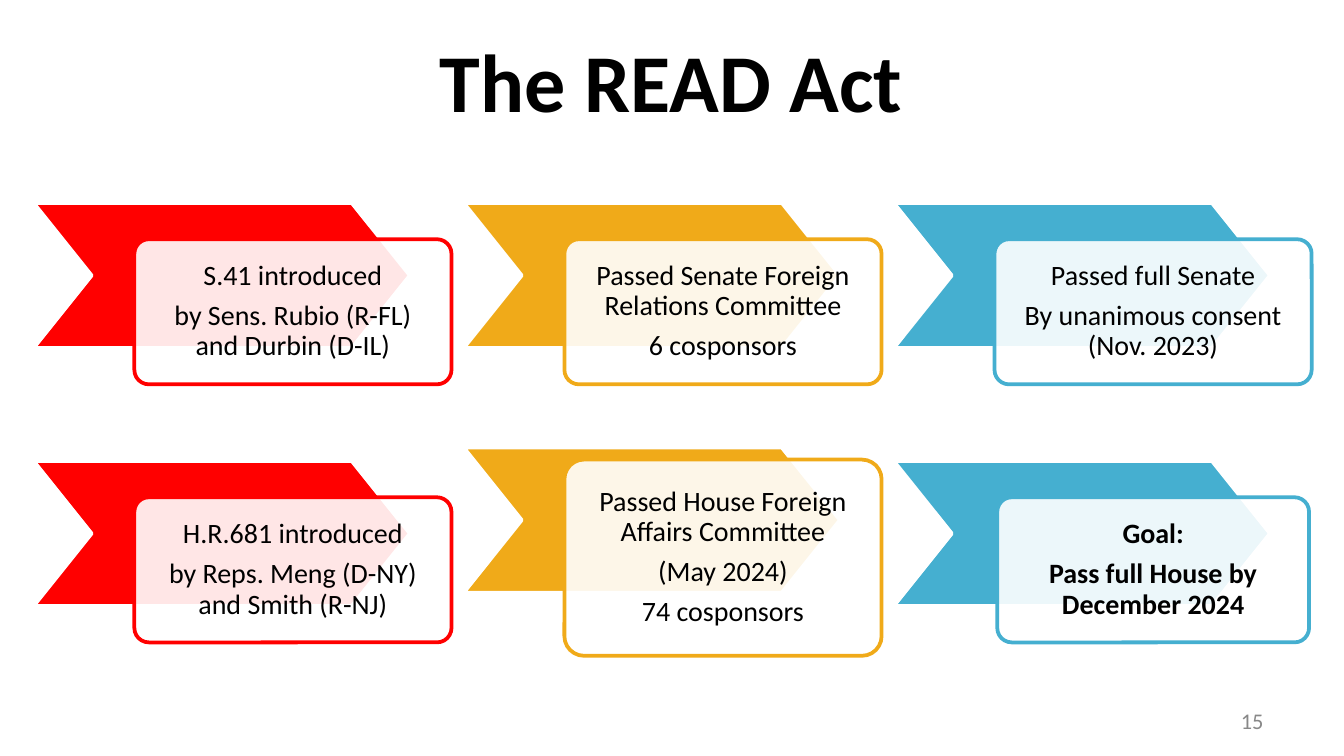
"""Build the READ Act progress slide."""
from lxml import etree
from pptx import Presentation
from pptx.dml.color import RGBColor
from pptx.enum.shapes import MSO_SHAPE
from pptx.enum.text import MSO_ANCHOR, MSO_AUTO_SIZE, PP_ALIGN
from pptx.oxml.ns import qn
from pptx.util import Inches, Pt

CHEVRON, ROUNDED = MSO_SHAPE.CHEVRON, MSO_SHAPE.ROUNDED_RECTANGLE
MIDDLE, NO_FIT = MSO_ANCHOR.MIDDLE, MSO_AUTO_SIZE.NONE
CENTER, RIGHT = PP_ALIGN.CENTER, PP_ALIGN.RIGHT

THEME = {
    "font": "Calibri", "text": "000000", "muted": "888888", "white": "FFFFFF",
    "steps": ["FF0000", "F0AA19", "45AFD0"],
    "title_size": 44, "step_size": 15, "number_size": 12,
}
TITLE = "The READ Act"
PAGE_NUMBER = "15"
CARD = {"dx": 0.75, "dy": 0.27, "width": 2.36, "height": 1.08}
ROWS = [
    {"top": 1.51, "steps": [
        {"lines": ["S.41 introduced", "by Sens. Rubio (R-FL) and Durbin (D-IL)"]},
        {"lines": ["Passed Senate Foreign Relations Committee", "6 cosponsors"]},
        {"lines": ["Passed full Senate", "By unanimous consent (Nov. 2023)"]},
    ]},
    {"top": 3.43, "steps": [
        {"lines": ["H.R.681 introduced", "by Reps. Meng (D-NY) and Smith (R-NJ)"]},
        {"lines": ["Passed House Foreign Affairs Committee", "(May 2024)", "74 cosponsors"],
         "rise": 0.1, "card": {"dy": 0.09, "height": 1.46}},
        {"lines": ["Goal:", "Pass full House by December 2024"],
         "bold": True, "card": {"dx": 0.77, "width": 2.32}},
    ]},
]
SLIDE_WIDTH = Inches(10)
SLIDE_HEIGHT = SLIDE_WIDTH * 9 // 16
LEFT, COLUMN_STEP = 0.25, 3.2
CHEVRON_WIDTH, CHEVRON_HEIGHT = 2.8, 1.08


def color(value):
    return RGBColor.from_string(value)


def write(box, lines, size, ink, align, bold=False, inset=None):
    frame = box.text_frame
    frame.word_wrap = True
    frame.auto_size = NO_FIT
    frame.vertical_anchor = MIDDLE
    if inset is not None:
        frame.margin_left = frame.margin_right = Inches(inset)
        frame.margin_top = frame.margin_bottom = Inches(inset)
    frame.text = "\n".join(lines)
    for para in frame.paragraphs:
        para.alignment = align
        para.font.name = THEME["font"]
        para.font.size = Pt(size)
        para.font.bold = bold
        para.font.color.rgb = color(ink)
    return frame.paragraphs


def add_panel(group, kind, bounds, adjustment, fill, line):
    panel = group.shapes.add_shape(kind, *map(Inches, bounds))
    panel.shadow.inherit = False
    panel.adjustments[0] = adjustment
    panel.fill.solid()
    panel.fill.fore_color.rgb = color(fill)
    panel.line.color.rgb = color(line)
    panel.line.width = Pt(2)
    return panel


def set_opacity(panel, percent):
    fill = panel.fill._xPr.find(qn("a:solidFill"))
    etree.SubElement(fill[0], qn("a:alpha"), val=str(percent * 1000))


def add_step(group, step, left, row_top, accent):
    top = row_top - step.get("rise", 0)
    place = {**CARD, **step.get("card", {})}
    add_panel(group, CHEVRON, (left, top, CHEVRON_WIDTH, CHEVRON_HEIGHT),
              0.4, accent, THEME["white"])
    bounds = (left + place["dx"], top + place["dy"], place["width"], place["height"])
    card = add_panel(group, ROUNDED, bounds, 0.1, THEME["white"], accent)
    set_opacity(card, 90)
    paragraphs = write(card, step["lines"], THEME["step_size"], THEME["text"],
                       CENTER, step.get("bold", False), 0.12)
    for para in paragraphs:
        para.line_spacing = 0.9
        para.space_before = Pt(0)
        para.space_after = Pt(5.25)


def main():
    deck = Presentation()
    deck.slide_width, deck.slide_height = SLIDE_WIDTH, SLIDE_HEIGHT
    page = deck.slides.add_slide(deck.slide_layouts[5])
    title = page.shapes.title
    title.left, title.top, title.width, title.height = map(Inches, (0.95, 0.12, 8.09, 0.94))
    write(title, [TITLE], THEME["title_size"], THEME["text"], CENTER, True)
    number = page.shapes.add_textbox(*map(Inches, (7.17, 5.21, 2.33, 0.3)))
    write(number, [PAGE_NUMBER], THEME["number_size"], THEME["muted"], RIGHT)
    for row in ROWS:
        group = page.shapes.add_group_shape()
        for column, (step, accent) in enumerate(zip(row["steps"], THEME["steps"])):
            add_step(group, step, LEFT + column * COLUMN_STEP, row["top"], accent)
    deck.save("out.pptx")


if __name__ == "__main__":
    main()
